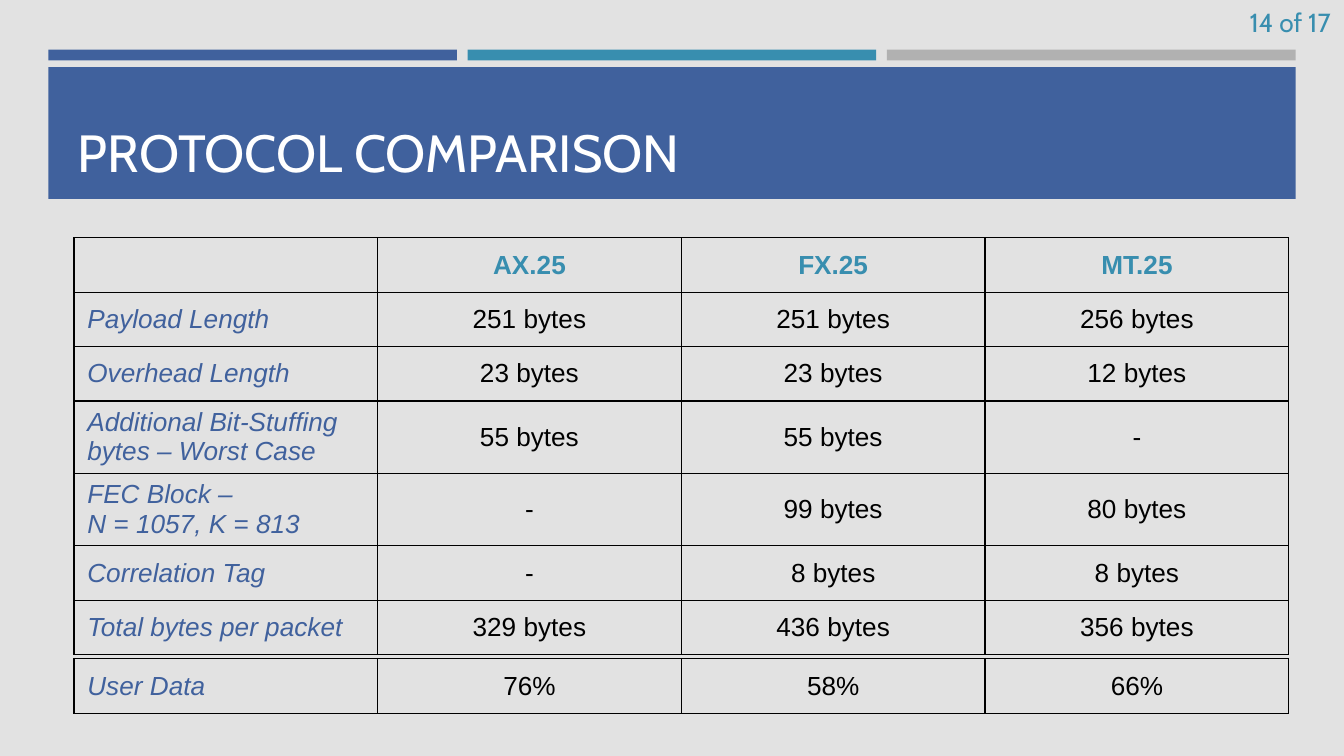
from dataclasses import dataclass

from lxml import etree
from pptx import Presentation
from pptx.dml.color import RGBColor
from pptx.enum.shapes import MSO_SHAPE
from pptx.enum.text import MSO_ANCHOR, MSO_AUTO_SIZE, PP_ALIGN
from pptx.oxml.ns import qn
from pptx.util import Inches, Pt

RECT = MSO_SHAPE.RECTANGLE
LEFT, CENTER, RIGHT = PP_ALIGN.LEFT, PP_ALIGN.CENTER, PP_ALIGN.RIGHT
TOP, MIDDLE, BOTTOM = MSO_ANCHOR.TOP, MSO_ANCHOR.MIDDLE, MSO_ANCHOR.BOTTOM
NO_FIT = MSO_AUTO_SIZE.NONE


@dataclass(frozen=True)
class Theme:
    background: str = "E2E2E2"
    blue: str = "40619D"
    teal: str = "388EAF"
    gray: str = "B1B1B1"
    white: str = "FFFFFF"
    black: str = "000000"
    heading_font: str = "Cabin"
    table_font: str = "Arial"
    title_size: int = 28
    text_size: int = 14
    border: float = 0.75


THEME = Theme()
WIDTH = 10
HEIGHT = WIDTH * 9 / 16
MARGIN = 0.36
CONTENT = WIDTH - 2 * MARGIN
TABLE_LEFT, TABLE_WIDTH = 0.55, 4 * 2.26
ROW_UNITS = 3  # a one-line row; each further line adds one unit

COMPARISON = [
    ["", "AX.25", "FX.25", "MT.25"],
    ["Payload Length", "251 bytes", "251 bytes", "256 bytes"],
    ["Overhead Length", "23 bytes", "23 bytes", "12 bytes"],
    ["Additional Bit-Stuffing bytes – Worst Case", "55 bytes", "55 bytes", "-"],
    ["FEC Block –\nN = 1057, K = 813", "-", "99 bytes", "80 bytes"],
    ["Correlation Tag", "-", "8 bytes", "8 bytes"],
    ["Total bytes per packet", "329 bytes", "436 bytes", "356 bytes"],
]
COMPARISON_UNITS = [ROW_UNITS + (i in (3, 4)) for i in range(len(COMPARISON))]
USER_DATA = [["User Data", "76%", "58%", "66%"]]


def rgb(color):
    return RGBColor.from_string(color)


def write(tf, text, *, color, font, size=THEME.text_size, align=LEFT,
          bold=False, italic=False):
    for i, line in enumerate(text.split("\n")):
        p = tf.paragraphs[0] if i == 0 else tf.add_paragraph()
        p.alignment = align
        r = p.add_run()
        r.text = line
        r.font.name, r.font.size = font, Pt(size)
        r.font.bold, r.font.italic = bold, italic
        r.font.color.rgb = rgb(color)


def add_bar(slide, box, color):
    sp = slide.shapes.add_shape(RECT, *map(Inches, box))
    sp.shadow.inherit = False
    sp.fill.solid()
    sp.fill.fore_color.rgb = rgb(color)
    sp.line.fill.background()


def add_stripes(slide, box, gap=0.08):
    x, y, w, h = box
    colors = [THEME.blue, THEME.teal, THEME.gray]
    stripe = (w - gap * (len(colors) - 1)) / len(colors)
    for i, color in enumerate(colors):
        add_bar(slide, (x + i * (stripe + gap), y, stripe, h), color)


def add_title_banner(slide, box, text):
    x, y, w, h = box
    add_bar(slide, box, THEME.blue)
    title = slide.shapes.title
    slide.shapes._spTree.append(title._element)  # in front of the banner
    title.left, title.top = Inches(x + 0.12), Inches(y + 0.08)
    title.width, title.height = Inches(w - 0.23), Inches(h - 0.15)
    tf = title.text_frame
    tf.word_wrap, tf.auto_size, tf.vertical_anchor = True, NO_FIT, BOTTOM
    write(tf, text, color=THEME.white, font=THEME.heading_font,
          size=THEME.title_size)


def add_page_number(slide, box, text):
    tf = slide.shapes.add_textbox(*map(Inches, box)).text_frame
    tf.word_wrap, tf.vertical_anchor = True, TOP
    write(tf, text, color=THEME.teal, font=THEME.heading_font, align=RIGHT)


def set_borders(cell):
    tc_pr = cell._tc.get_or_add_tcPr()
    for side in ("a:lnL", "a:lnR", "a:lnT", "a:lnB"):
        ln = etree.SubElement(tc_pr, qn(side), w=str(Pt(THEME.border)))
        fill = etree.SubElement(ln, qn("a:solidFill"))
        etree.SubElement(fill, qn("a:srgbClr"), val=THEME.black)


def cell_format(column, is_header):
    if is_header:
        return dict(color=THEME.teal, align=CENTER, bold=True)
    if column == 0:
        return dict(color=THEME.blue, italic=True)
    return dict(color=THEME.black, align=CENTER)


def add_grid(slide, box, rows, units, has_header=False):
    w, h = box[2:]
    table = slide.shapes.add_table(len(rows), len(rows[0]),
                                   *map(Inches, box)).table
    table.first_row = has_header
    table.horz_banding = False
    for column in table.columns:
        column.width = Inches(w / len(rows[0]))
    for i, row in enumerate(rows):
        table.rows[i].height = Inches(h * units[i] / sum(units))
        for j, text in enumerate(row):
            cell = table.cell(i, j)
            cell.vertical_anchor = MIDDLE
            set_borders(cell)
            cell.fill.background()
            write(cell.text_frame, text, font=THEME.table_font,
                  **cell_format(j, has_header and i == 0))


def build_comparison_slide(prs):
    slide = prs.slides.add_slide(prs.slide_layouts[5])
    slide.background.fill.solid()
    slide.background.fill.fore_color.rgb = rgb(THEME.background)
    add_stripes(slide, (MARGIN, 0.37, CONTENT, 0.08))
    add_title_banner(slide, (MARGIN, 0.5, CONTENT, 0.98), "PROTOCOL COMPARISON")
    add_grid(slide, (TABLE_LEFT, 1.77, TABLE_WIDTH, 3.1), COMPARISON,
             COMPARISON_UNITS, has_header=True)
    add_page_number(slide, (8.06, 0, 1.94, 0.34), "14 of 17")
    add_grid(slide, (TABLE_LEFT, 4.9, TABLE_WIDTH, 0.41), USER_DATA, [ROW_UNITS])


def main():
    prs = Presentation()
    prs.slide_width, prs.slide_height = Inches(WIDTH), Inches(HEIGHT)
    build_comparison_slide(prs)
    prs.save("out.pptx")


if __name__ == "__main__":
    main()
